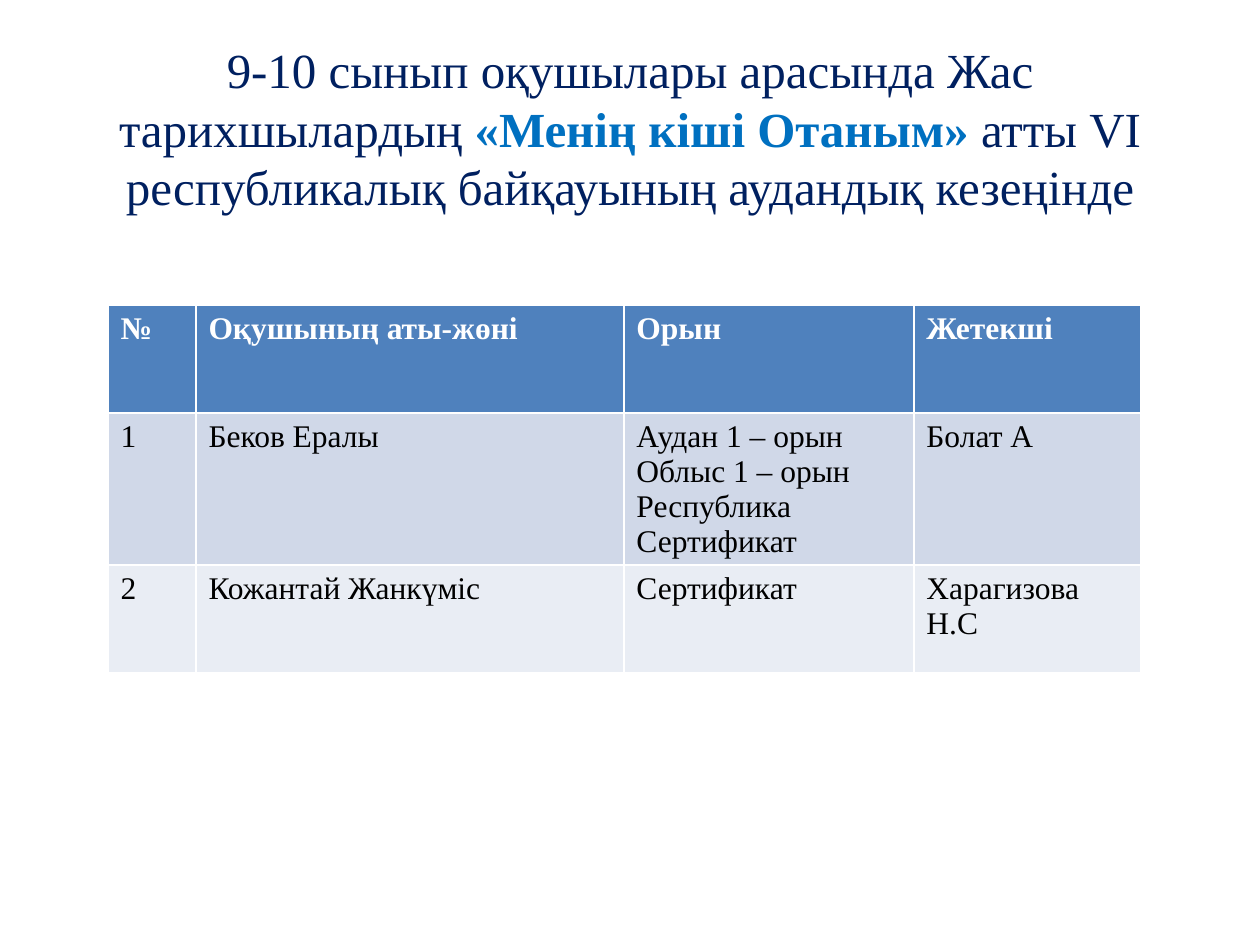
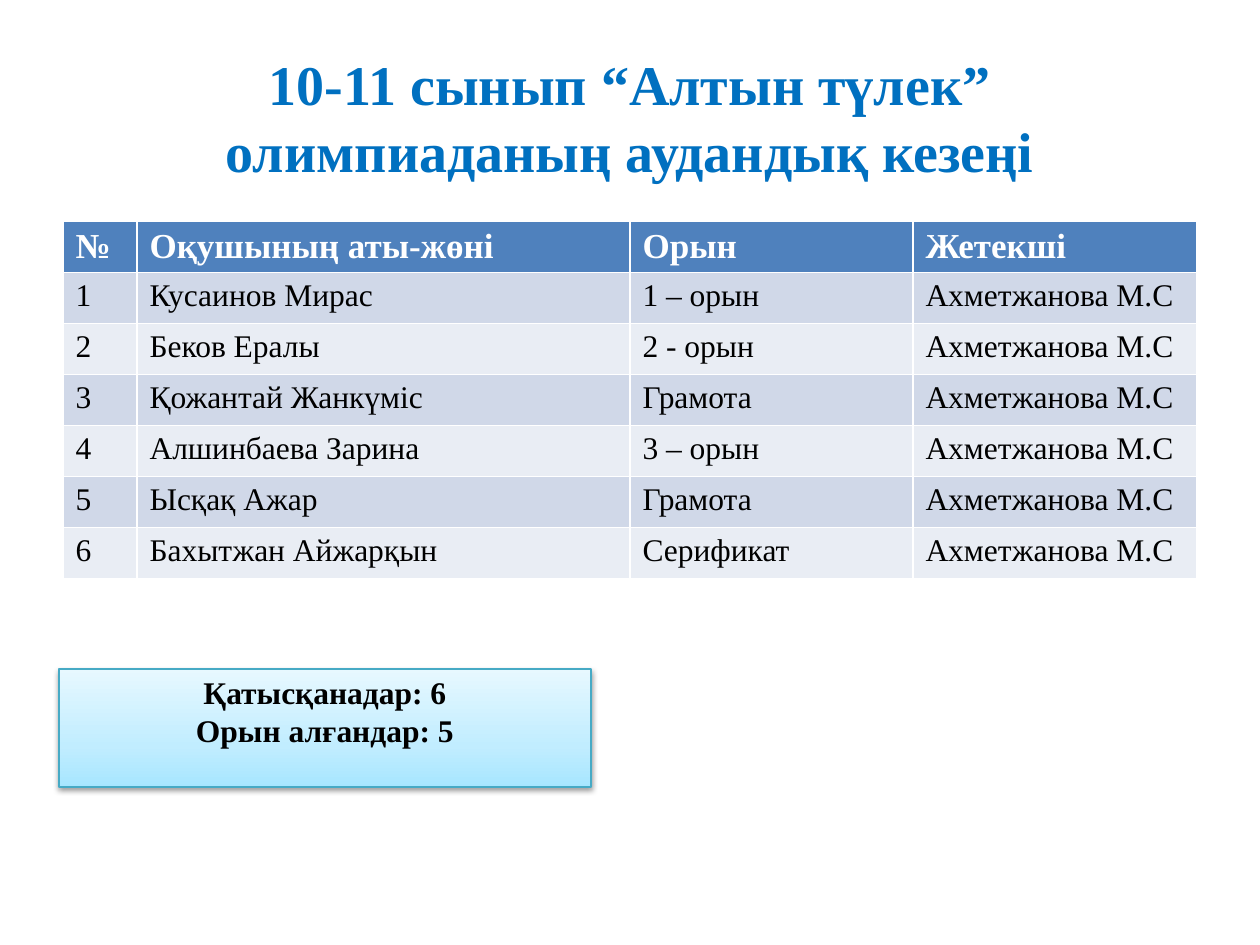
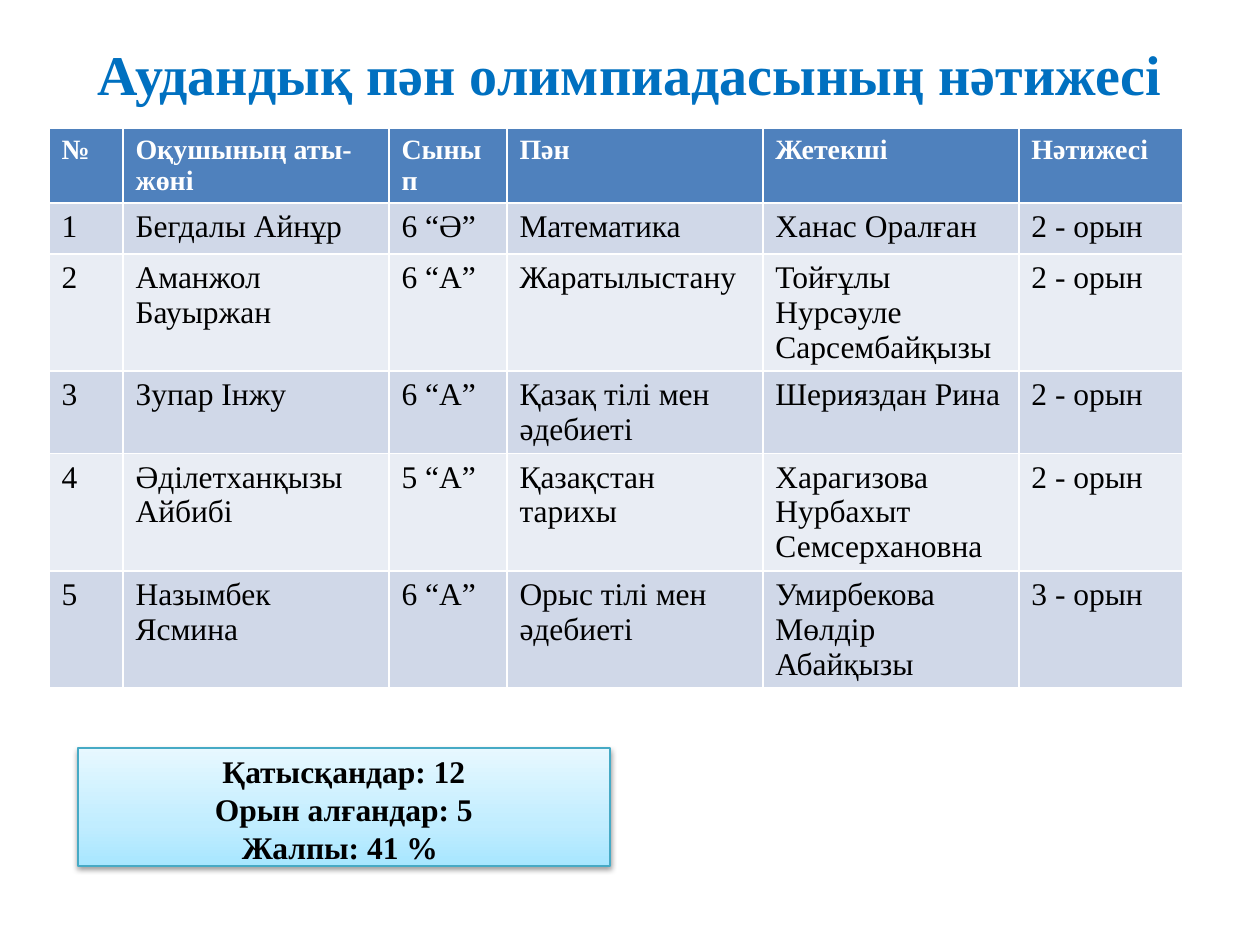
from copy import deepcopy

from lxml import etree
from pptx import Presentation
from pptx.dml.color import RGBColor
from pptx.enum.shapes import MSO_SHAPE
from pptx.enum.text import MSO_ANCHOR, MSO_AUTO_SIZE, PP_ALIGN
from pptx.oxml.ns import qn
from pptx.util import Pt

RECT = MSO_SHAPE.RECTANGLE
TOP, MIDDLE = MSO_ANCHOR.TOP, MSO_ANCHOR.MIDDLE
LEFT, CENTER = PP_ALIGN.LEFT, PP_ALIGN.CENTER
NO_FIT = MSO_AUTO_SIZE.NONE

PX = 914400 // 126
FONT = "Times New Roman"
NAVY, BLUE, WHITE, BLACK = "002060", "0070C0", "FFFFFF", "000000"
HEAD, BANDS = "4F81BD", ("D0D8E8", "E9EDF4")
EDGE = "46AAC5"
GLOW = [(0, "A7E6FF"), (0.35, "C1EDFF"), (1, "E7F8FF")]


def px(*sizes):
    return [size * PX for size in sizes]


def rgb(code):
    return RGBColor.from_string(code)


def write(frame, lines, size=18, color=BLACK, bold=False, align=LEFT,
          anchor=TOP, pitch=None):
    """Each line is a string or a list of (text, color, bold) runs."""
    frame.word_wrap = True
    frame.vertical_anchor = anchor
    for i, line in enumerate(lines):
        para = frame.paragraphs[0] if i == 0 else frame.add_paragraph()
        para.alignment = align
        if pitch:
            para.line_spacing = Pt(round(size * pitch, 1))
        runs = [(line, color, bold)] if isinstance(line, str) else line
        for text, tint, heavy in runs:
            run = para.add_run()
            run.text = text
            font = run.font
            font.name, font.size, font.bold = FONT, Pt(size), heavy
            font.color.rgb = rgb(tint)


def add_title(slide, line, height, size=32):
    title = slide.shapes.title
    title.left, title.top, title.width, title.height = px(63, 38, 1134, height)
    title.text_frame.auto_size = NO_FIT
    write(title.text_frame, [line], size=size, color=BLUE, bold=True,
          align=CENTER, anchor=MIDDLE, pitch=1.2)


def add_grid(slide, left, top, cols, rows, data, size):
    """Table with a header row of the given text size and banded rows."""
    box = px(left, top, sum(cols), sum(rows))
    table = slide.shapes.add_table(len(rows), len(cols), *box).table
    for col, width in zip(table.columns, px(*cols)):
        col.width = width
    for i, (row, height) in enumerate(zip(table.rows, px(*rows))):
        row.height = height
        head = i == 0
        for cell, text in zip(row.cells, data[i]):
            cell.fill.solid()
            cell.fill.fore_color.rgb = rgb(HEAD if head else BANDS[(i - 1) % 2])
            write(cell.text_frame, text.split("\n"), size=size if head else 18,
                  color=WHITE if head else BLACK, bold=head)


def add_glow(fill):
    fill.gradient()
    fill.gradient_angle = 90
    first = fill.gradient_stops[0]
    first_xml = fill._fill._gradFill.gsLst[0]
    first_xml.addnext(deepcopy(first_xml))
    for stop, (place, color) in zip(fill.gradient_stops, GLOW):
        stop.position = place
        stop.color.rgb = rgb(color)


def add_shade(shape):
    shape.shadow.inherit = False
    effects = shape._element.spPr.find(qn("a:effectLst"))
    shade = etree.SubElement(effects, qn("a:outerShdw"), blurRad="40000",
                             dist="20000", dir="5400000", rotWithShape="0")
    tint = etree.SubElement(shade, qn("a:srgbClr"), val=BLACK)
    etree.SubElement(tint, qn("a:alpha"), val="38000")


def add_total(slide, left, top, lines):
    box = slide.shapes.add_shape(RECT, *px(left, top, 532, 118))
    add_glow(box.fill)
    box.line.color.rgb = rgb(EDGE)
    box.line.width = Pt(0.75)
    add_shade(box)
    box.text_frame.margin_top = 4 * PX
    write(box.text_frame, lines, bold=True, align=CENTER, pitch=1.2)


def contest(slide):
    add_title(slide, [
        ("9-10 сынып оқушылары арасында Жас тарихшылардың ", NAVY, False),
        ("«Менің кіші Отаным» ", BLUE, True),
        ("атты VI республикалық байқауының аудандық кезеңінде", NAVY, False),
    ], 179, size=28)
    add_grid(slide, 108, 305, [88, 428, 290, 227], [108, 152, 108], [
        ("№", "Оқушының аты-жөні", "Орын", "Жетекші"),
        ("1", "Беков Ералы",
         "Аудан 1 – орын\nОблыс 1 – орын\nРеспублика Сертификат", "Болат А"),
        ("2", "Кожантай Жанкүміс", "Сертификат", "Харагизова Н.С"),
    ], 18)


def graduates(slide):
    add_title(slide, "10-11 сынып “Алтын түлек” олимпиаданың аудандық кезеңі",
              158)
    results = [
        ("Кусаинов Мирас", "1 – орын"),
        ("Беков Ералы", "2 - орын"),
        ("Қожантай Жанкүміс", "Грамота"),
        ("Алшинбаева Зарина", "3 – орын"),
        ("Ысқақ Ажар", "Грамота"),
        ("Бахытжан Айжарқын", "Серификат"),
    ]
    data = [("№", "Оқушының аты-жөні", "Орын", "Жетекші")]
    data += [(str(n), name, place, "Ахметжанова М.С")
             for n, (name, place) in enumerate(results, 1)]
    add_grid(slide, 63, 221, [74, 493, 283, 284], [51] * len(data), data, 20)
    add_total(slide, 59, 669, ["Қатысқанадар: 6", "Орын алғандар: 5"])


def subjects(slide):
    add_title(slide, "Аудандық пән олимпиадасының нәтижесі", 71)
    add_grid(slide, 49, 128, [74, 266, 118, 256, 256, 164],
             [75, 51, 117, 82, 117, 117], [
        ("№", "Оқушының аты-жөні", "Сынып", "Пән", "Жетекші", "Нәтижесі"),
        ("1", "Бегдалы Айнұр", "6 “Ә”", "Математика", "Ханас Оралған",
         "2 - орын"),
        ("2", "Аманжол Бауыржан", "6 “А”", "Жаратылыстану",
         "Тойғұлы Нурсәуле Сарсембайқызы", "2 - орын"),
        ("3", "Зупар Інжу", "6 “А”", "Қазақ тілі мен әдебиеті",
         "Шерияздан Рина", "2 - орын"),
        ("4", "Әділетханқызы Айбибі", "5 “А”", "Қазақстан тарихы",
         "Харагизова Нурбахыт Семсерхановна", "2 - орын"),
        ("5", "Назымбек Ясмина", "6 “А”", "Орыс тілі мен әдебиеті",
         "Умирбекова Мөлдір Абайқызы", "3 - орын"),
    ], 16)
    add_total(slide, 78, 748,
              ["Қатысқандар: 12", "Орын алғандар: 5", "Жалпы: 41 % "])


def main():
    deck = Presentation()
    deck.slide_width, deck.slide_height = px(1260, 945)
    layout = deck.slide_layouts.get_by_name("Title Only")
    for build in (contest, graduates, subjects):
        build(deck.slides.add_slide(layout))
    deck.save("out.pptx")


if __name__ == "__main__":
    main()
